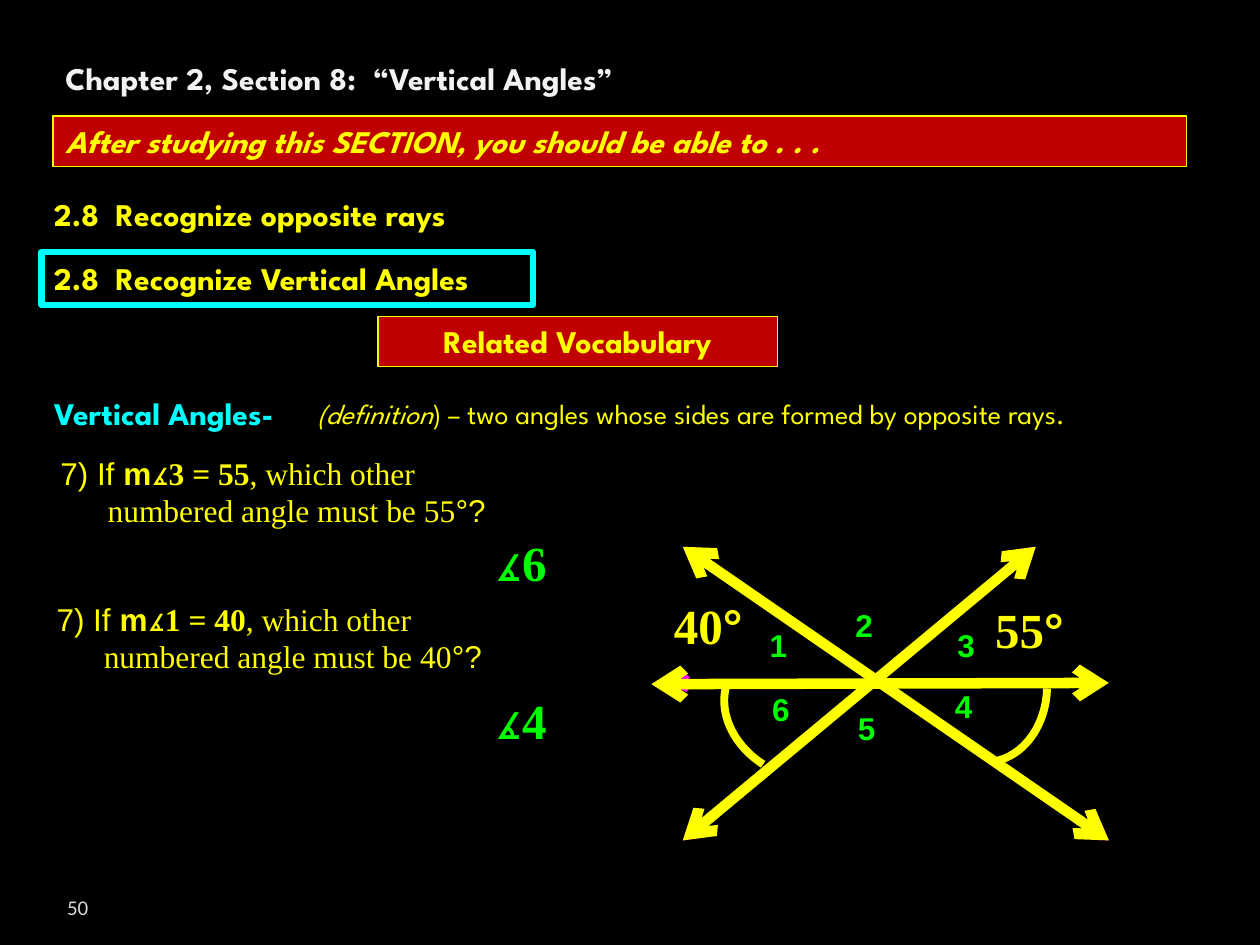
from lxml import etree
from pptx import Presentation
from pptx.dml.color import RGBColor
from pptx.enum.shapes import MSO_CONNECTOR, MSO_SHAPE
from pptx.enum.text import MSO_ANCHOR, MSO_AUTO_SIZE, PP_ALIGN
from pptx.oxml.ns import qn
from pptx.util import Emu, Pt

PX = 9144
BLACK = RGBColor(0x00, 0x00, 0x00)
YELLOW = RGBColor(0xFF, 0xFF, 0x00)
RED = RGBColor(0xC0, 0x00, 0x00)
CYAN = RGBColor(0x00, 0xFF, 0xFF)
GREEN = RGBColor(0x00, 0xFF, 0x00)
MAGENTA = RGBColor(0xFF, 0x00, 0xFF)
OFF_WHITE = RGBColor(0xF2, 0xF2, 0xF2)
GRAY = RGBColor(0xD9, 0xD9, 0xD9)
HEADING, SERIF, SANS, NUMBER = "League Spartan", "Times New Roman", "Arial", "Calibri"
RECTANGLE, ARC, STRAIGHT = MSO_SHAPE.RECTANGLE, MSO_SHAPE.ARC, MSO_CONNECTOR.STRAIGHT
LEFT, CENTER, RIGHT = PP_ALIGN.LEFT, PP_ALIGN.CENTER, PP_ALIGN.RIGHT
TOP, MIDDLE, BOTTOM = MSO_ANCHOR.TOP, MSO_ANCHOR.MIDDLE, MSO_ANCHOR.BOTTOM
GROW = MSO_AUTO_SIZE.SHAPE_TO_FIT_TEXT


def px(*lengths):
    return [Emu(length * PX) for length in lengths]


class AngleSlide:
    """Holds the lesson style and the slide, and draws each kind of element."""

    def __init__(self, presentation):
        self.slide = presentation.slides.add_slide(presentation.slide_layouts[6])
        self.shapes = self.slide.shapes
        self.slide.background.fill.solid()
        self.slide.background.fill.fore_color.rgb = BLACK

    def run(self, paragraph, wording, font=HEADING, size=18, color=YELLOW, bold=False, italic=False):
        run = paragraph.add_run()
        run.text = wording
        run.font.name, run.font.size = font, Pt(size)
        run.font.bold, run.font.italic = bold, italic
        run.font.color.rgb = color

    def text(self, box, *runs, align=LEFT):
        label = self.shapes.add_textbox(*px(*box))
        frame = label.text_frame
        frame.word_wrap, frame.auto_size = True, GROW
        frame.paragraphs[0].alignment = align
        for wording, style in runs:
            self.run(frame.paragraphs[0], wording, **style)
        return frame

    def heading(self, box, wording, color=YELLOW):
        self.text(box, (wording, dict(color=color, bold=True)))

    def frame(self, box, line, width, fill=None):
        panel = self.shapes.add_shape(RECTANGLE, *px(*box))
        panel.shadow.inherit = False
        if fill is None:
            panel.fill.background()
        else:
            panel.fill.solid()
            panel.fill.fore_color.rgb = fill
        panel.line.color.rgb, panel.line.width = line, Pt(width)
        return panel

    def banner(self, box, wording, align=LEFT, italic=False):
        frame = self.frame(box, YELLOW, 0.75, RED).text_frame
        frame.word_wrap, frame.vertical_anchor, frame.auto_size = True, TOP, GROW
        frame.paragraphs[0].alignment = align
        self.run(frame.paragraphs[0], wording, bold=True, italic=italic)

    def question(self, box, angle, degrees):
        frame = self.text(
            box,
            ("7) If ", dict(font=SANS)),
            ("m", dict(font=SANS, bold=True)),
            (f"∡{angle} = {degrees}", dict(font=SERIF, bold=True)),
            (", which other", dict(font=SERIF)),
        )
        second = frame.add_paragraph()
        second._p.get_or_add_pPr().set("marL", str(Pt(27)))
        self.run(second, f"numbered angle must be {degrees}", SERIF)
        self.run(second, "°?", SANS)

    def answer(self, box, angle):
        self.text(box, (f"∡{angle}", dict(font=SERIF, size=28, color=GREEN, bold=True)))

    def measure(self, box, degrees):
        large = dict(size=28, bold=True)
        self.text(box, (degrees, dict(font=SERIF, **large)), ("°", dict(font=SANS, **large)))

    def number(self, left, top, wording):
        self.text((left, top, 41, 40), (wording, dict(font=SANS, color=GREEN, bold=True)))

    def line(self, start, end, color, width):
        line = self.shapes.add_connector(STRAIGHT, *px(*start, *end))
        line.line.color.rgb, line.line.width = color, Pt(width)
        outline = line.line._get_or_add_ln()
        for tip in ("a:headEnd", "a:tailEnd"):
            etree.SubElement(outline, qn(tip)).set("type", "arrow")
        etree.SubElement(line._element.spPr, qn("a:effectLst"))

    def arc(self, left, top, rotation):
        mark = self.shapes.add_shape(ARC, *px(left, top, 101, 124))
        mark.shadow.inherit = False
        mark.fill.background()
        mark.line.color.rgb, mark.line.width = YELLOW, Pt(4.5)
        mark.adjustments[0], mark.adjustments[1] = 165.34, 211.85
        mark.rotation = rotation
        mark._element.spPr.find(qn("a:xfrm")).set("flipH", "1")

    def page_number(self, box, wording):
        frame = self.text(box, (wording, dict(font=NUMBER, size=12, color=GRAY)), align=RIGHT)
        frame.auto_size = MSO_AUTO_SIZE.NONE
        frame.vertical_anchor, frame.margin_bottom = BOTTOM, 0


def main():
    presentation = Presentation()
    presentation.slide_width, presentation.slide_height = px(1000, 750)
    lesson = AngleSlide(presentation)

    lesson.heading((33, 150, 450, 40), "2.8  Recognize opposite rays")
    lesson.heading((33, 201, 450, 40), "2.8  Recognize Vertical Angles")
    lesson.banner((300, 251, 317, 40), "Related Vocabulary", align=CENTER)
    lesson.banner((42, 92, 900, 40), "After studying this SECTION, you should be able to . . .", italic=True)
    lesson.heading((42, 42, 900, 40), "Chapter 2, Section 8:  “Vertical Angles”", OFF_WHITE)
    lesson.frame((33, 200, 390, 42), CYAN, 3.78)
    lesson.page_number((0, 700, 80, 30), "50")

    lesson.heading((33, 308, 225, 40), "Vertical Angles-", CYAN)
    lesson.text(
        (242, 310, 750, 37),
        ("(definition", dict(size=16, italic=True)),
        (") – two angles whose sides are formed by opposite rays.", dict(size=16)),
    )
    lesson.question((38, 355, 382, 71), 3, 55)
    lesson.answer((383, 418, 83, 57), 6)
    lesson.question((35, 471, 382, 71), 1, 40)
    lesson.answer((383, 543, 83, 57), 4)

    rising = (542, 667), (822, 434)
    falling = (542, 434), (880, 667)
    for start, end in (rising, falling, ((533, 542), (872, 542))):
        lesson.line(start, end, MAGENTA, 3)
    numbers = ((601, 492), (669, 476), (750, 492), (748, 540), (671, 558), (603, 543))
    for angle, (left, top) in enumerate(numbers, 1):
        lesson.number(left, top, str(angle))
    for start, end in (rising, ((517, 543), (880, 542)), falling):
        lesson.line(start, end, YELLOW, 6)
    lesson.arc(584, 503, 297.8)
    lesson.arc(730, 481, 176.9)
    lesson.measure((525, 468, 83, 57), "40")
    lesson.measure((780, 471, 83, 57), "55")

    presentation.save("out.pptx")


if __name__ == "__main__":
    main()
